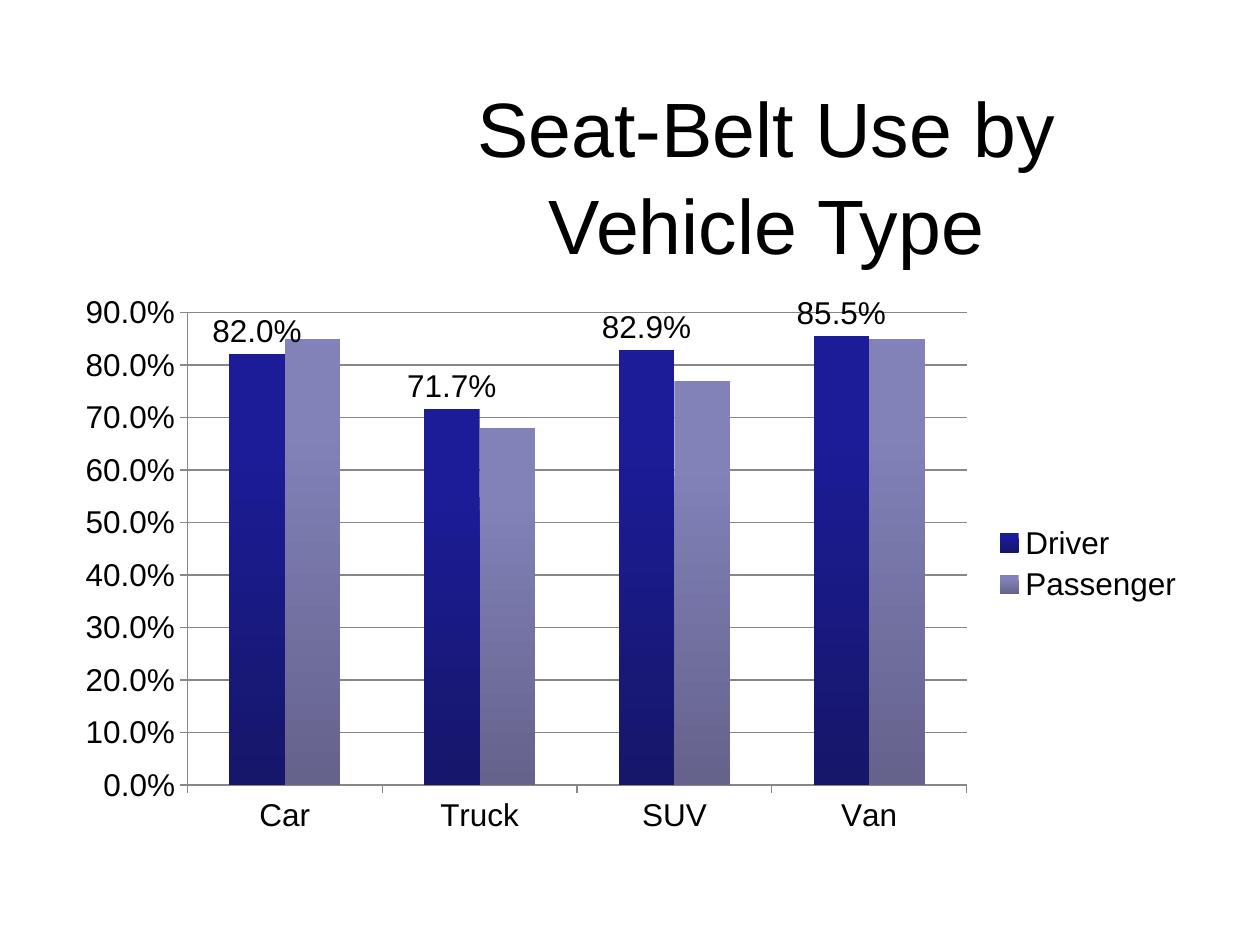
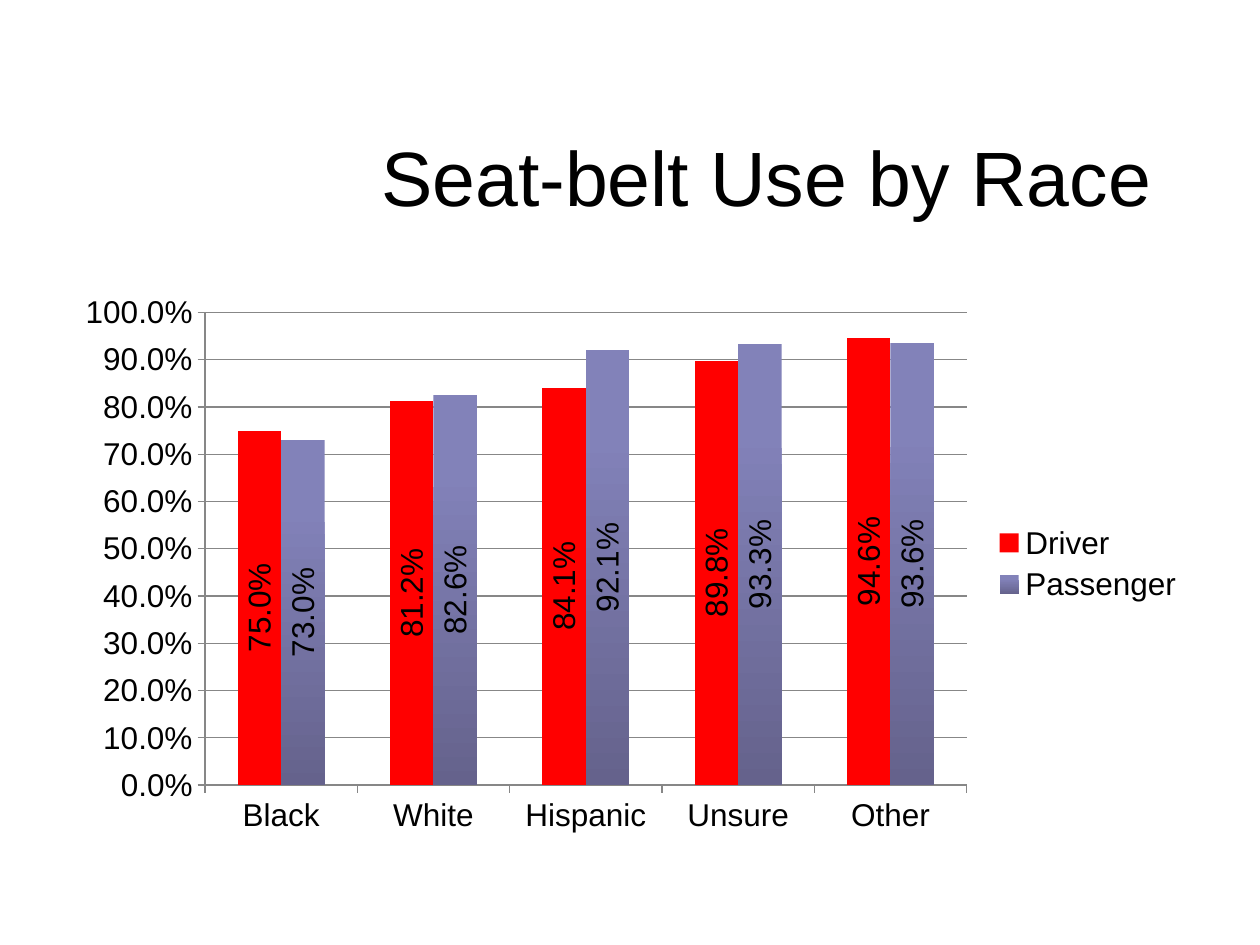
import pptx
import pptx.util
import pptx.chart.data
import pptx.dml.color
import pptx.enum.chart
import pptx.enum.text

PIXEL = 9144
FONT = "Arial"
COLOURS = {
    "text": "000000",
    "grid": "878787",
    "navy_top": "1C1C99",
    "navy_bottom": "16166A",
    "lilac_top": "8282B9",
    "lilac_bottom": "65628C",
    "red": "FF0000",
}
TITLE_BOX = (267, 75, 683, 125)
CHART_BOX = (50, 225, 900, 445)
PERCENT = "0.0%"
NAVY = ("navy_top", "navy_bottom")
LILAC = ("lilac_top", "lilac_bottom")
RED = ("red",)


def colour(name):
    """Return the named colour of the palette."""
    return pptx.dml.color.RGBColor.from_string(COLOURS[name])


def scaled(box):
    """Turn a box in px into EMU lengths."""
    return [pptx.util.Emu(length * PIXEL) for length in box]


def style_font(font, size):
    """Give a font the shared face and colour."""
    font.name = FONT
    font.size = pptx.util.Pt(size)
    font.bold = False
    font.color.rgb = colour("text")


def add_title(page, box, text):
    """Move the title placeholder into the box and fill it."""
    title = page.shapes.title
    title.left, title.top, title.width, title.height = scaled(box)
    frame = title.text_frame
    frame.text = text
    frame.word_wrap = True
    frame.auto_size = pptx.enum.text.MSO_AUTO_SIZE.NONE
    frame.vertical_anchor = pptx.enum.text.MSO_ANCHOR.MIDDLE
    para = frame.paragraphs[0]
    para.alignment = pptx.enum.text.PP_ALIGN.CENTER
    para.line_spacing = 1.05
    style_font(para.font, 44)


def fill_bars(series, shades):
    """Fill a series with one colour or a downward gradient."""
    series.invert_if_negative = False
    fill = series.format.fill
    if len(shades) == 1:
        fill.solid()
        fill.fore_color.rgb = colour(shades[0])
        return
    fill.gradient()
    fill.gradient_angle = 270
    for stop, shade, position in zip(fill.gradient_stops, shades, (0.2, 1)):
        stop.color.rgb = colour(shade)
        stop.position = position


def label_bars(series, centred):
    """Show values above the bars, or upright in their middle."""
    places = pptx.enum.chart.XL_LABEL_POSITION
    labels = series.data_labels
    labels.show_value = True
    labels.number_format = PERCENT
    labels.number_format_is_linked = False
    labels.position = places.CENTER if centred else places.OUTSIDE_END
    style_font(labels.font, 18)
    if centred:
        body = labels._element.find(".//" + pptx.oxml.ns.qn("a:bodyPr"))
        body.set("rot", "-5400000")
        body.set("vert", "horz")


def style_axes(chart, maximum):
    """Set ticks, lines and the percentage scale."""
    values = chart.value_axis
    values.minimum_scale = 0
    values.maximum_scale = maximum
    values.major_unit = 0.1
    values.has_major_gridlines = True
    values.tick_labels.number_format = PERCENT
    values.tick_labels.number_format_is_linked = False
    for axis in (values, chart.category_axis):
        axis.major_tick_mark = pptx.enum.chart.XL_TICK_MARK.OUTSIDE
        axis.minor_tick_mark = pptx.enum.chart.XL_TICK_MARK.NONE
    for part in (values, chart.category_axis, values.major_gridlines):
        part.format.line.color.rgb = colour("grid")
        part.format.line.width = pptx.util.Pt(0.75)


def add_bar_chart(page, box, categories, groups, maximum, centred):
    """Add a clustered column chart; groups hold name, values, shades, labelled."""
    data = pptx.chart.data.CategoryChartData(number_format=PERCENT)
    data.categories = categories
    for name, values, _, _ in groups:
        data.add_series(name, values)
    kind = pptx.enum.chart.XL_CHART_TYPE.COLUMN_CLUSTERED
    chart = page.shapes.add_chart(kind, *scaled(box), data).chart
    chart.has_title = False
    style_font(chart.font, 18)
    chart.has_legend = True
    chart.legend.position = pptx.enum.chart.XL_LEGEND_POSITION.RIGHT
    chart.legend.include_in_layout = False
    style_axes(chart, maximum)
    plot = chart.plots[0]
    plot.gap_width = 150
    plot.overlap = 0
    plot.vary_by_categories = False
    for series, (_, _, shades, labelled) in zip(plot.series, groups):
        fill_bars(series, shades)
        if labelled:
            label_bars(series, centred)


def add_chart_page(deck, title, *chart_parts):
    """Add a page with a title and a bar chart."""
    page = deck.slides.add_slide(deck.slide_layouts[5])
    add_title(page, TITLE_BOX, title)
    add_bar_chart(page, CHART_BOX, *chart_parts)


def main():
    """Build the deck on seat-belt use."""
    deck = pptx.Presentation()
    deck.slide_width, deck.slide_height = scaled((1000, 750))
    add_chart_page(
        deck,
        "Seat-Belt Use by Vehicle Type",
        ("Car", "Truck", "SUV", "Van"),
        (
            ("Driver", (0.82, 0.717, 0.829, 0.855), NAVY, True),
            ("Passenger", (0.85, 0.68, 0.77, 0.85), LILAC, False),
        ),
        0.9,
        False,
    )
    add_chart_page(
        deck,
        "Seat-belt Use by Race",
        ("Black", "White", "Hispanic", "Unsure", "Other"),
        (
            ("Driver", (0.75, 0.812, 0.841, 0.898, 0.946), RED, True),
            ("Passenger", (0.73, 0.826, 0.921, 0.933, 0.936), LILAC, True),
        ),
        1,
        True,
    )
    deck.save("out.pptx")


if __name__ == "__main__":
    main()
